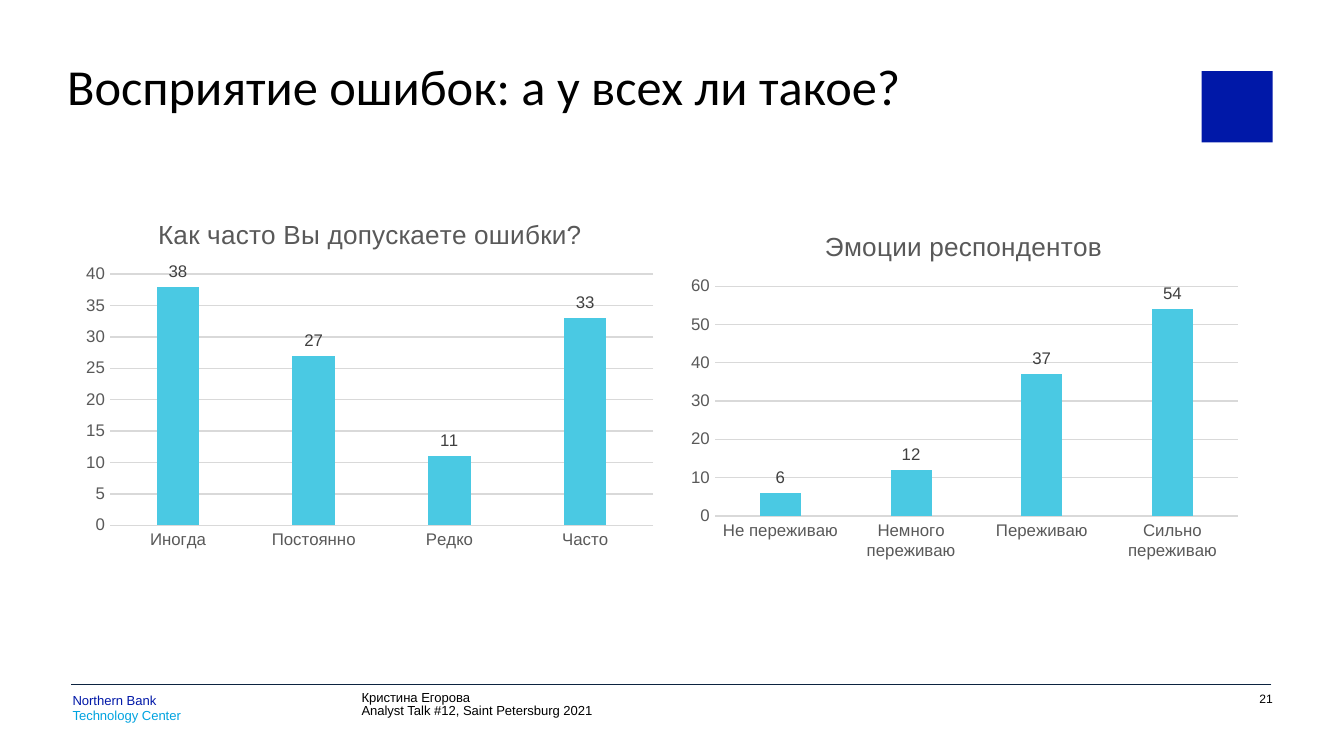
"""Build the survey slide about how people perceive mistakes, with two column charts."""
from lxml import etree
from pptx import Presentation
from pptx.chart.data import CategoryChartData
from pptx.dml.color import RGBColor
from pptx.enum.chart import XL_CHART_TYPE, XL_LABEL_POSITION, XL_TICK_MARK
from pptx.enum.shapes import MSO_CONNECTOR, MSO_SHAPE
from pptx.enum.text import MSO_ANCHOR, PP_ALIGN
from pptx.oxml.ns import qn
from pptx.util import Inches, Pt

COLUMN = XL_CHART_TYPE.COLUMN_CLUSTERED
OUTSIDE_END = XL_LABEL_POSITION.OUTSIDE_END
NO_TICK = XL_TICK_MARK.NONE
STRAIGHT = MSO_CONNECTOR.STRAIGHT
RECTANGLE = MSO_SHAPE.RECTANGLE
TOP = MSO_ANCHOR.TOP
LEFT, RIGHT = PP_ALIGN.LEFT, PP_ALIGN.RIGHT

BLACK = RGBColor(0x00, 0x00, 0x00)
NAVY = RGBColor(0x0C, 0x23, 0x40)
BLUE = RGBColor(0x00, 0x18, 0xA8)
SKY = RGBColor(0x00, 0xA3, 0xE0)
CYAN = RGBColor(0x4A, 0xC9, 0xE3)
GRID_GRAY = RGBColor(0xD9, 0xD9, 0xD9)
TEXT_GRAY = RGBColor(0x59, 0x59, 0x59)
LABEL_GRAY = RGBColor(0x40, 0x40, 0x40)

SLIDE_WIDTH = Inches(10)
SLIDE_HEIGHT = SLIDE_WIDTH * 9 // 16
FOOTER_TOP, FOOTER_HEIGHT = 5.09, 0.27
FOOTER_INSETS = (0, 0.07, 0, 0)

TEXTS = [
    dict(box=(0.5, 0.5, 8.43, 0.59), insets=(0, 0, 0.59, 0), font="Calibri", size=27,
         spacing=0.8, align=LEFT,
         lines=[("Восприятие ошибок: а у всех ли такое?", BLACK)]),
    dict(box=(0.54, FOOTER_TOP, 1.97, FOOTER_HEIGHT), insets=FOOTER_INSETS, font="Arial",
         size=7, spacing=Pt(8), align=LEFT,
         lines=[("Northern Bank", BLUE), ("Technology Center", SKY)]),
    dict(box=(2.69, FOOTER_TOP, 2.5, FOOTER_HEIGHT), insets=FOOTER_INSETS, font="Arial",
         size=7, spacing=Pt(6.5), align=LEFT,
         lines=[("Кристина Егорова", BLACK),
                ("Analyst Talk #12, Saint Petersburg 2021", BLACK)]),
    dict(box=(8.93, FOOTER_TOP, 0.54, FOOTER_HEIGHT), insets=FOOTER_INSETS, font="Arial",
         size=6.5, spacing=Pt(6.5), align=RIGHT, lines=[("21", BLACK)]),
]

CHARTS = [
    dict(title="Как часто Вы допускаете ошибки?",
         box=(0.56, 1.48, 4.39, 2.66), plot=(0.82, 2.04, 4.04, 1.87), top=40, step=5,
         values={"Иногда": 38, "Постоянно": 27, "Редко": 11, "Часто": 33}),
    dict(title="Эмоции респондентов",
         box=(5.05, 1.57, 4.24, 2.66), plot=(5.32, 2.13, 3.89, 1.71), top=60, step=10,
         values={"Не переживаю": 6, "Немного переживаю": 12,
                 "Переживаю": 37, "Сильно переживаю": 54}),
]


def style_font(font, size, color, name="Arial"):
    font.name = name
    font.size = Pt(size)
    font.color.rgb = color
    font.bold = False


def style_line(line, color, width):
    line.color.rgb = color
    line.width = Pt(width)


def add_text(slide, content):
    shape = slide.shapes.add_textbox(*map(Inches, content["box"]))
    frame = shape.text_frame
    frame.word_wrap = True
    frame.vertical_anchor = TOP
    (frame.margin_left, frame.margin_top,
     frame.margin_right, frame.margin_bottom) = map(Inches, content["insets"])
    for index, (text, color) in enumerate(content["lines"]):
        paragraph = frame.add_paragraph() if index else frame.paragraphs[0]
        paragraph.alignment = content["align"]
        paragraph.line_spacing = content["spacing"]
        run = paragraph.add_run()
        run.text = text
        style_font(run.font, content["size"], color, content["font"])


def place_plot(chart, box, plot):
    area = chart.element.find(".//" + qn("c:plotArea"))
    for old_layout in area.findall(qn("c:layout")):
        area.remove(old_layout)
    layout = etree.Element(qn("c:layout"))
    manual = etree.SubElement(layout, qn("c:manualLayout"))
    left, top, width, height = box
    settings = {
        "layoutTarget": "inner", "xMode": "edge", "yMode": "edge",
        "x": (plot[0] - left) / width, "y": (plot[1] - top) / height,
        "w": plot[2] / width, "h": plot[3] / height,
    }
    for name, value in settings.items():
        etree.SubElement(manual, qn("c:" + name)).set("val", str(value))
    area.insert(0, layout)


def add_column_chart(slide, content):
    data = CategoryChartData()
    data.categories = list(content["values"])
    data.add_series("Series 1", list(content["values"].values()))
    chart = slide.shapes.add_chart(COLUMN, *map(Inches, content["box"]), data).chart
    style_font(chart.font, 10, BLACK)
    chart.has_legend = False
    chart.has_title = True
    run = chart.chart_title.text_frame.paragraphs[0].add_run()
    run.text = content["title"]
    style_font(run.font, 14, TEXT_GRAY)
    chart.chart_title.include_in_layout = False

    for axis in (chart.category_axis, chart.value_axis):
        axis.major_tick_mark = axis.minor_tick_mark = NO_TICK
        style_font(axis.tick_labels.font, 9, TEXT_GRAY)
    style_line(chart.category_axis.format.line, GRID_GRAY, 0.75)
    value_axis = chart.value_axis
    value_axis.format.line.fill.background()
    style_line(value_axis.major_gridlines.format.line, GRID_GRAY, 0.75)
    value_axis.minimum_scale = 0
    value_axis.maximum_scale = content["top"]
    value_axis.major_unit = content["step"]

    plot = chart.plots[0]
    plot.vary_by_categories = False
    plot.gap_width = 219
    plot.overlap = -27
    fill = plot.series[0].format.fill
    fill.solid()
    fill.fore_color.rgb = CYAN
    labels = plot.series[0].data_labels
    labels.show_value = True
    labels.position = OUTSIDE_END
    style_font(labels.font, 9, LABEL_GRAY)
    place_plot(chart, content["box"], content["plot"])


def main():
    presentation = Presentation()
    presentation.slide_width = SLIDE_WIDTH
    presentation.slide_height = SLIDE_HEIGHT
    slide = presentation.slides.add_slide(presentation.slide_layouts[6])

    emblem = slide.shapes.add_shape(RECTANGLE, *map(Inches, (8.94, 0.53, 0.53, 0.53)))
    emblem.shadow.inherit = False
    emblem.fill.solid()
    emblem.fill.fore_color.rgb = BLUE
    emblem.line.fill.background()

    rule = slide.shapes.add_connector(
        STRAIGHT, *map(Inches, (9.46, FOOTER_TOP, 0.53, FOOTER_TOP)))
    style_line(rule.line, NAVY, 0.5)
    etree.SubElement(rule.element.spPr, qn("a:effectLst"))

    for content in TEXTS:
        add_text(slide, content)
    for content in CHARTS:
        add_column_chart(slide, content)
    presentation.save("out.pptx")


if __name__ == "__main__":
    main()
